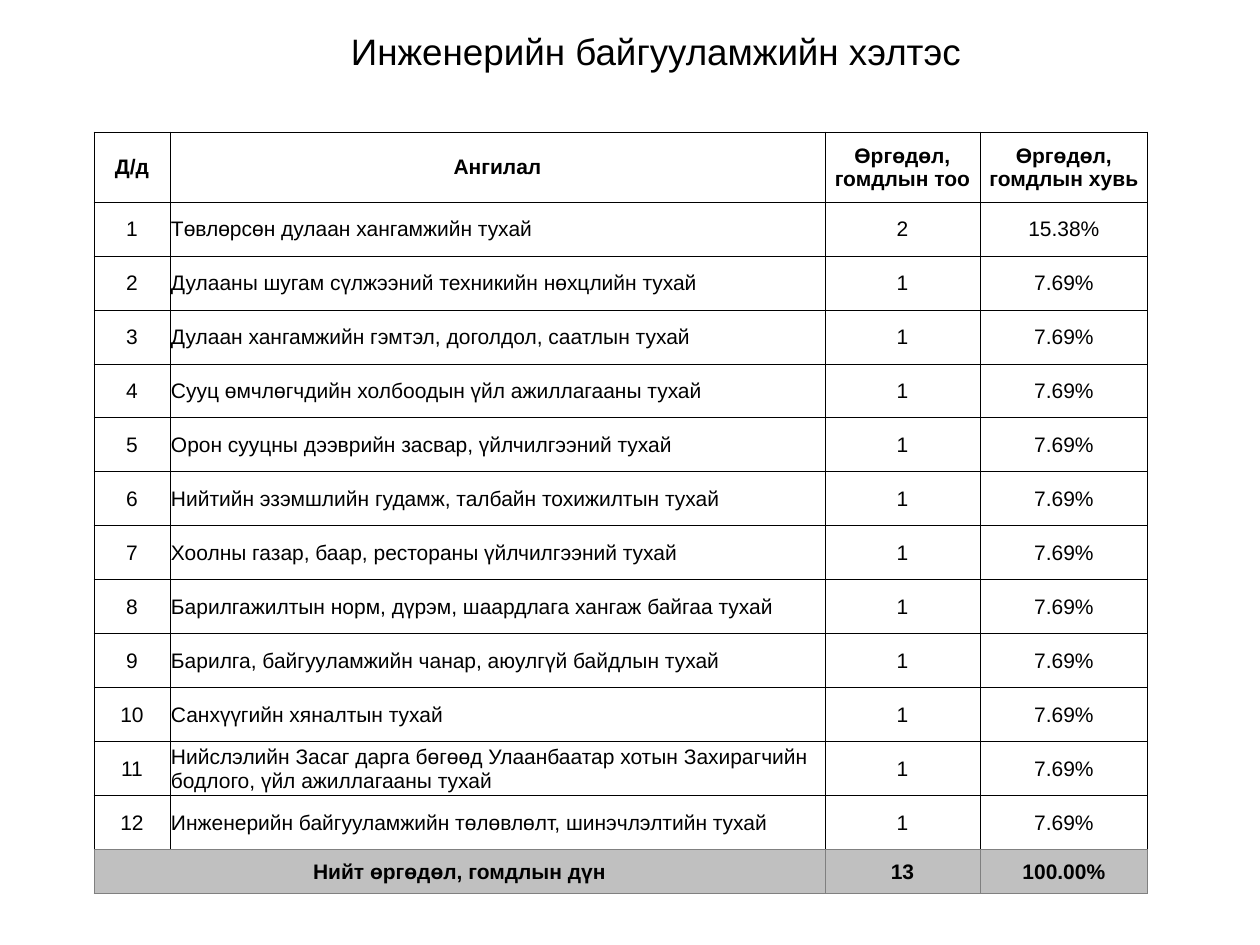
from lxml.etree import SubElement
from pptx import Presentation
from pptx.dml.color import RGBColor
from pptx.enum.text import MSO_ANCHOR, MSO_AUTO_SIZE, PP_ALIGN
from pptx.oxml.ns import qn
from pptx.util import Emu, Pt

COLORS = {"text": "000000", "grid": "000000", "total_grid": "808080",
          "paper": "FFFFFF", "total": "C0C0C0"}
FONT = "Arial"


def px(value):
    return Emu(round(value * 914400 / 126))


def add_border(cell, side, color):
    line = SubElement(cell._tc.get_or_add_tcPr(), qn(f"a:ln{side}"), w=str(Pt(0.5)))
    fill = SubElement(line, qn("a:solidFill"))
    SubElement(fill, qn("a:srgbClr"), val=color)


presentation = Presentation()
presentation.slide_width, presentation.slide_height = px(1260), px(945)
slide = presentation.slides.add_slide(presentation.slide_layouts[5])

# Title, centred a little to the right by a wider left inset
title = slide.shapes.title
title.left, title.top, title.width, title.height = px(94), px(18), px(1074), px(72)
frame = title.text_frame
frame.text = "Инженерийн байгууламжийн хэлтэс"
frame.word_wrap = True
frame.auto_size = MSO_AUTO_SIZE.NONE
frame.vertical_anchor = MSO_ANCHOR.MIDDLE
frame.margin_left, frame.margin_right = px(63), px(13)
paragraph = frame.paragraphs[0]
paragraph.alignment = PP_ALIGN.CENTER
paragraph.line_spacing = 0.9
paragraph.font.name, paragraph.font.size = FONT, Pt(21)
paragraph.font.color.rgb = RGBColor.from_string(COLORS["text"])

# Table contents
categories = [
    "Төвлөрсөн дулаан хангамжийн тухай",
    "Дулааны шугам сүлжээний техникийн нөхцлийн тухай",
    "Дулаан хангамжийн гэмтэл, доголдол, саатлын тухай",
    "Сууц өмчлөгчдийн холбоодын үйл ажиллагааны тухай",
    "Орон сууцны дээврийн засвар, үйлчилгээний тухай",
    "Нийтийн эзэмшлийн гудамж, талбайн тохижилтын тухай",
    "Хоолны газар, баар, рестораны үйлчилгээний тухай",
    "Барилгажилтын норм, дүрэм, шаардлага хангаж байгаа тухай",
    "Барилга, байгууламжийн чанар, аюулгүй байдлын тухай",
    "Санхүүгийн хяналтын тухай",
    "Нийслэлийн Засаг дарга бөгөөд Улаанбаатар хотын Захирагчийн "
    "бодлого, үйл ажиллагааны тухай",
    "Инженерийн байгууламжийн төлөвлөлт, шинэчлэлтийн тухай",
]
counts = [2] + [1] * 11
total = sum(counts)
rows = [["Д/д", "Ангилал", "Өргөдөл, гомдлын тоо", "Өргөдөл, гомдлын хувь"]]
for number, (category, count) in enumerate(zip(categories, counts), start=1):
    rows.append([str(number), category, str(count), f"{count / total:.2%}"])
rows.append(["Нийт өргөдөл, гомдлын дүн", "", str(total), "100.00%"])

# Table grid
column_widths = [76, 655, 155, 168]
row_heights = [70] + [54] * len(categories) + [44]
last = len(rows) - 1
table = slide.shapes.add_table(len(rows), len(column_widths), px(94), px(132),
                               px(sum(column_widths)), px(sum(row_heights))).table
table.first_row = table.horz_banding = False
for column, width in zip(table.columns, column_widths):
    column.width = px(width)
for row, height in zip(table.rows, row_heights):
    row.height = px(height)
table.cell(last, 0).merge(table.cell(last, 1))

# Table cells
for r, values in enumerate(rows):
    is_total = r == last
    for c, value in enumerate(values):
        cell = table.cell(r, c)
        for side in "LRTB":
            gray = is_total or (r == last - 1 and side == "B")
            add_border(cell, side, COLORS["total_grid" if gray else "grid"])
        cell.fill.solid()
        cell.fill.fore_color.rgb = RGBColor.from_string(COLORS["total" if is_total else "paper"])
        cell.vertical_anchor = MSO_ANCHOR.MIDDLE
        cell.margin_left = cell.margin_right = cell.margin_top = px(1)
        cell.margin_bottom = 0
        if cell.is_spanned:
            continue
        cell.text = value
        paragraph = cell.text_frame.paragraphs[0]
        is_category = c == 1 and 0 < r < last
        paragraph.alignment = PP_ALIGN.LEFT if is_category else PP_ALIGN.CENTER
        paragraph.font.name, paragraph.font.size = FONT, Pt(12)
        paragraph.font.bold = r in (0, last)
        paragraph.font.color.rgb = RGBColor.from_string(COLORS["text"])

presentation.save("out.pptx")
